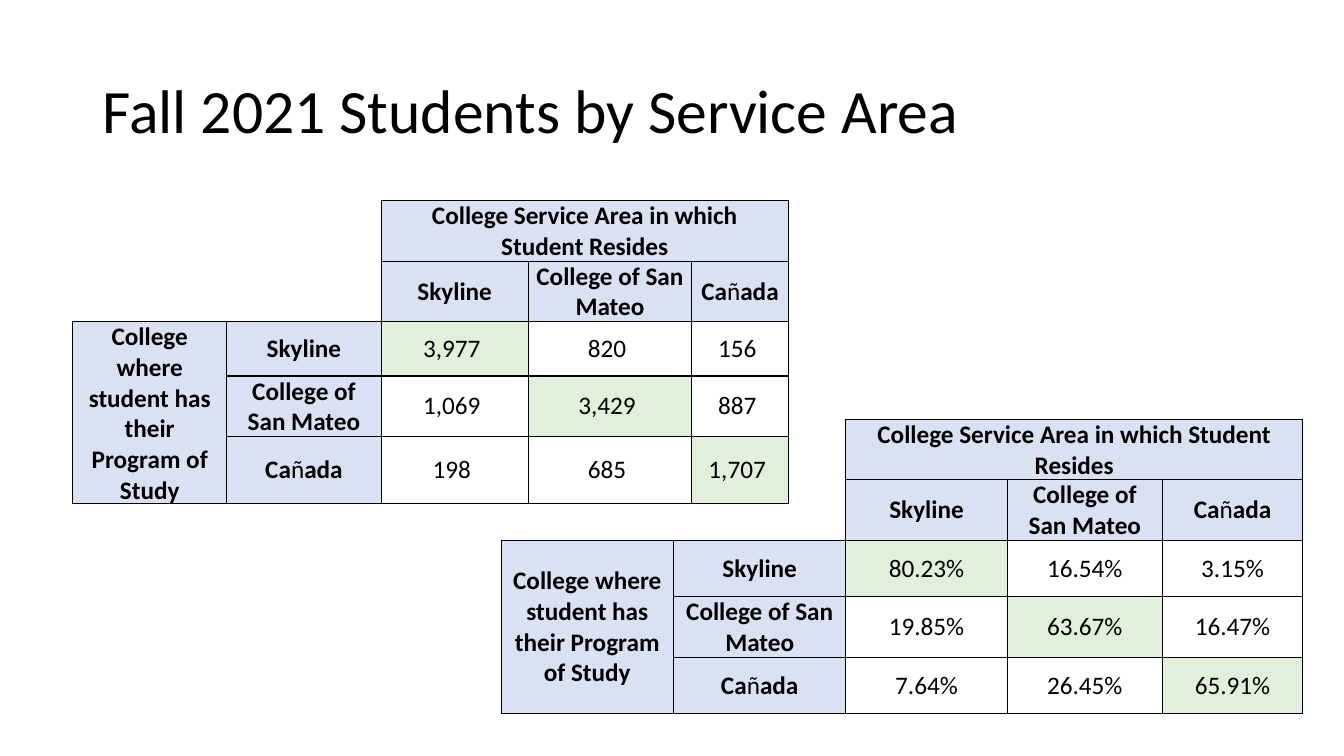
from dataclasses import dataclass

from lxml import etree
from pptx import Presentation
from pptx import util as u
from pptx.dml.color import RGBColor
from pptx.enum import text
from pptx.oxml import ns

BLACK = RGBColor(0x00, 0x00, 0x00)
HEADER_BLUE = RGBColor(0xD9, 0xE1, 0xF2)
DIAGONAL_GREEN = RGBColor(0xE2, 0xEF, 0xDA)
FONT = "Calibri"
PLAIN_STYLE = "{2D5ABB26-0587-4C30-8999-92F81FD0307C}"

RESIDENCE = "College Service Area in which Student Resides"
PROGRAM = "College where student has their Program of Study"
COLLEGES = ("Skyline", "College of San Mateo", "Cañada")
HEADS = 2  # header rows above and header columns left of the values


@dataclass(frozen=True)
class ServiceAreaTable:
    left: float
    top: float
    height: float
    widths: tuple[float, ...]
    first_row: float
    other_rows: float
    values: tuple[tuple[str, ...], ...]


PERCENTAGES = ServiceAreaTable(
    4.97, 4.16, 2.92, (1.71, 1.71, 1.6, 1.54, 1.39), 0.28, 0.56,
    (("80.23%", "16.54%", "3.15%"),
     ("19.85%", "63.67%", "16.47%"),
     ("7.64%", "26.45%", "65.91%")))
HEADCOUNTS = ServiceAreaTable(
    0.72, 1.99, 3.0, (1.53, 1.53, 1.46, 1.62, 0.96), 0.27, 0.54,
    (("3,977 ", "820 ", "156 "),
     ("1,069 ", "3,429 ", "887 "),
     ("198 ", "685 ", "1,707 ")))


def write(frame, words: str, *, size: float, bold: bool = False,
          align=text.PP_ALIGN.LEFT, spacing: float = 1.0) -> None:
    """Write one paragraph; the letter ñ is never bold."""
    paragraph = frame.paragraphs[0]
    paragraph.alignment = align
    paragraph.line_spacing = spacing
    before, enye, after = words.partition("ñ")
    for part in filter(None, (before, enye, after)):
        run = paragraph.add_run()
        run.text = part
        run.font.name = FONT
        run.font.size = u.Pt(size)
        run.font.bold = bold and part != "ñ"
        run.font.color.rgb = BLACK


def add_borders(cell, sides: str) -> None:
    properties = cell._tc.get_or_add_tcPr()
    for side in sides:
        line = etree.SubElement(properties, ns.qn(f"a:ln{side}"), w=str(u.Pt(1)))
        fill = etree.SubElement(line, ns.qn("a:solidFill"))
        etree.SubElement(fill, ns.qn("a:srgbClr"), val=str(BLACK))


def cell_words(area: ServiceAreaTable, row: int, column: int) -> str:
    if row >= HEADS and column >= HEADS:
        return area.values[row - HEADS][column - HEADS]
    if (row, column) == (0, HEADS):
        return RESIDENCE
    if (row, column) == (HEADS, 0):
        return PROGRAM
    if row == 1 and column >= HEADS:
        return COLLEGES[column - HEADS]
    if column == 1 and row >= HEADS:
        return COLLEGES[row - HEADS]
    return ""


def format_cell(cell, area: ServiceAreaTable, row: int, column: int) -> None:
    in_corner = row < HEADS and column < HEADS
    is_value = row >= HEADS and column >= HEADS

    # The empty corner is bordered only where it meets the headers
    if in_corner:
        add_borders(cell, ("R" if column == 1 else "") + ("B" if row == 1 else ""))
    else:
        add_borders(cell, "LRTB")

    if in_corner or (is_value and row != column):
        cell.fill.background()
    else:
        cell.fill.solid()
        cell.fill.fore_color.rgb = DIAGONAL_GREEN if is_value else HEADER_BLUE

    cell.margin_left = cell.margin_right = u.Inches(0.07)
    cell.margin_top = cell.margin_bottom = 0
    cell.vertical_anchor = text.MSO_ANCHOR.MIDDLE
    words = cell_words(area, row, column)
    if words:
        write(cell.text_frame, words, size=18, bold=not is_value,
              align=text.PP_ALIGN.CENTER)


def add_service_area_table(slide, area: ServiceAreaTable) -> None:
    count = HEADS + len(COLLEGES)
    holder = slide.shapes.add_table(
        count, count, u.Inches(area.left), u.Inches(area.top),
        u.Inches(sum(area.widths)), u.Inches(area.height))
    table = holder.table
    table.first_row = table.horz_banding = False
    table._tbl.tblPr.find(ns.qn("a:tableStyleId")).text = PLAIN_STYLE

    for column, width in zip(table.columns, area.widths):
        column.width = u.Inches(width)
    for index, row in enumerate(table.rows):
        row.height = u.Inches(area.other_rows if index else area.first_row)
    holder.height = u.Inches(area.height)

    # Merged headings across the top and down the side
    table.cell(0, HEADS).merge(table.cell(0, count - 1))
    table.cell(HEADS, 0).merge(table.cell(count - 1, 0))
    for row in range(count):
        for column in range(count):
            format_cell(table.cell(row, column), area, row, column)


def main() -> None:
    deck = Presentation()
    deck.slide_width, deck.slide_height = u.Inches(13.33), u.Inches(7.5)
    slide = deck.slides.add_slide(deck.slide_layouts[6])

    # Title
    title = slide.shapes.add_textbox(
        u.Inches(0.92), u.Inches(0.4), u.Inches(11.5), u.Inches(1.45)).text_frame
    title.word_wrap = True
    title.vertical_anchor = text.MSO_ANCHOR.MIDDLE
    write(title, "Fall 2021 Students by Service Area", size=44, spacing=0.9)

    # Tables
    for area in (PERCENTAGES, HEADCOUNTS):
        add_service_area_table(slide, area)

    deck.save("out.pptx")


if __name__ == "__main__":
    main()
